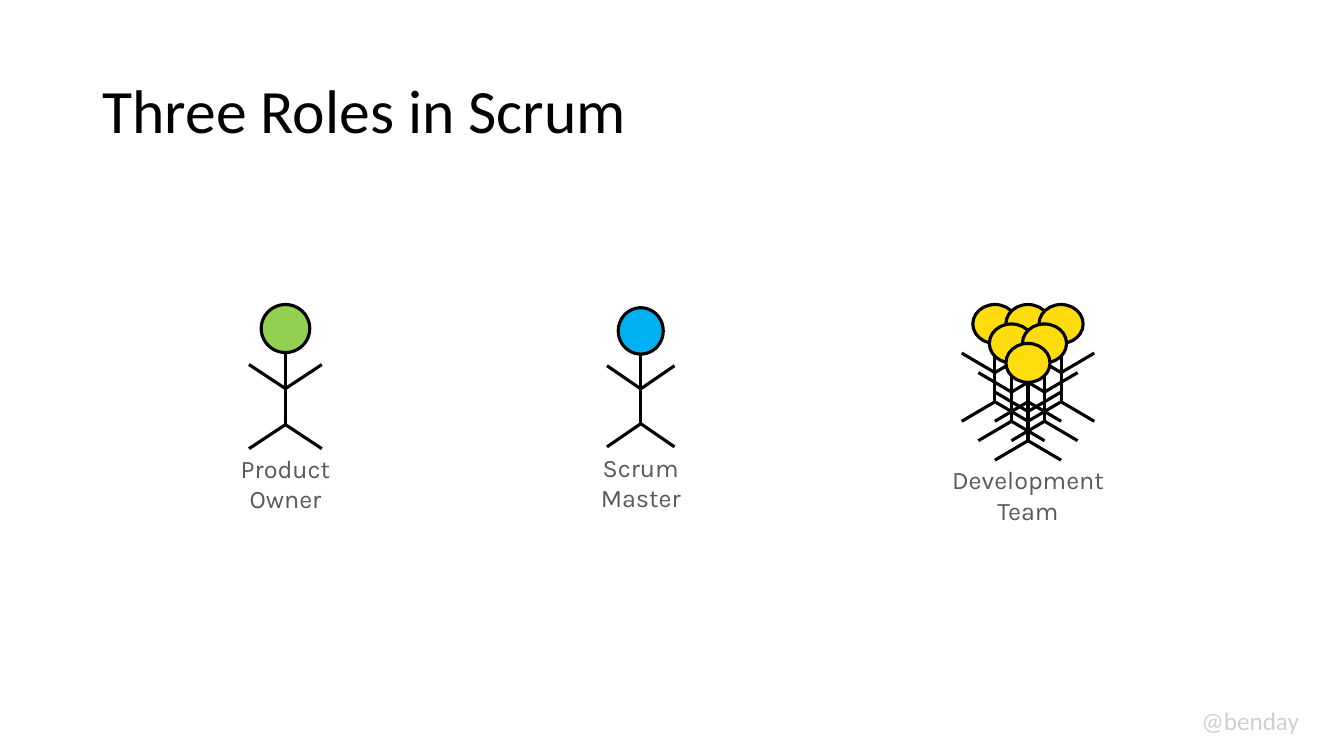
from lxml import etree
from pptx import Presentation
from pptx.dml.color import RGBColor
from pptx.enum.shapes import MSO_CONNECTOR, MSO_SHAPE
from pptx.enum.text import MSO_ANCHOR, MSO_AUTO_SIZE, PP_ALIGN
from pptx.oxml.ns import qn
from pptx.util import Pt

OVAL = MSO_SHAPE.OVAL
STRAIGHT = MSO_CONNECTOR.STRAIGHT
LEFT, CENTER = PP_ALIGN.LEFT, PP_ALIGN.CENTER
MIDDLE = MSO_ANCHOR.MIDDLE
GROW, NO_FIT = MSO_AUTO_SIZE.SHAPE_TO_FIT_TEXT, MSO_AUTO_SIZE.NONE

COLORS = {
    "black": "000000",
    "handle": "D0CECE",
    "label": "58595B",
    "owner": "92D050",
    "master": "00B0F0",
    "team": "FFDC0C",
}


def color(name):
    return RGBColor.from_string(COLORS[name])


class RolePage:
    """Draws on one slide; all lengths are in points."""

    heading_font = "Calibri"
    label_font = "Karla"
    stroke = 2.25

    def __init__(self, deck):
        self.page = deck.slides.add_slide(deck.slide_layouts[5])

    def format_text(self, frame, font, size, color_name, align):
        for para in frame.paragraphs:
            para.alignment = align
            for span in para.runs:
                span.font.name = font
                span.font.size = Pt(size)
                span.font.color.rgb = color(color_name)

    def title(self, text, left, top, width, height):
        box = self.page.shapes.title
        box.left, box.top, box.width, box.height = Pt(left), Pt(top), Pt(width), Pt(height)
        frame = box.text_frame
        frame.text = text
        frame.auto_size = NO_FIT
        frame.vertical_anchor = MIDDLE
        frame.paragraphs[0].line_spacing = 0.9
        self.format_text(frame, self.heading_font, 44, "black", LEFT)

    def text(self, shapes, text, left, top, width, height, font, color_name, align):
        box = shapes.add_textbox(Pt(left), Pt(top), Pt(width), Pt(height))
        frame = box.text_frame
        frame.text = text
        frame.word_wrap = False
        frame.auto_size = GROW
        self.format_text(frame, font, 18, color_name, align)

    def handle(self, text, left, top, width, height):
        self.text(self.page.shapes, text, left, top, width, height,
                  self.heading_font, "handle", LEFT)

    def line(self, shapes, x1, y1, x2, y2):
        limb = shapes.add_connector(STRAIGHT, Pt(x1), Pt(y1), Pt(x2), Pt(y2))
        limb.line.color.rgb = color("black")
        limb.line.width = Pt(self.stroke)
        etree.SubElement(limb._element.spPr, qn("a:effectLst"))

    def person(self, shapes, center, top, width, height, fill):
        """Stick figure whose joints sit on twelfths of its height."""
        head_bottom, hand, shoulder, hip, foot = (
            top + height * part / 12 for part in (4, 5, 7, 10, 12))
        head_width = width * 2 / 3
        head = shapes.add_shape(OVAL, Pt(center - head_width / 2), Pt(top),
                                Pt(head_width), Pt(head_bottom - top))
        head.shadow.inherit = False
        head.fill.solid()
        head.fill.fore_color.rgb = color(fill)
        head.line.color.rgb = color("black")
        head.line.width = Pt(self.stroke)
        self.line(shapes, center, head_bottom, center, hip)
        for joint, tip in ((hip, foot), (shoulder, hand)):
            for side in (-1, 1):
                self.line(shapes, center, joint, center + side * width / 2, tip)

    def role(self, label, center, top, figure, fill, label_box, rows=1):
        """Grouped figures in rows, each row one shorter than the last, over a label."""
        shapes = self.page.shapes.add_group_shape().shapes
        width, height = figure
        for row in range(rows):
            count = rows - row
            for place in range(count):
                shift = (place - (count - 1) / 2) * width / 2
                self.person(shapes, center + shift, top + row * height / 6,
                            width, height, fill)
        label_top, label_width, label_height = label_box
        self.text(shapes, label, center - label_width / 2, label_top, label_width,
                  label_height, self.label_font, "label", CENTER)


def main():
    deck = Presentation()
    deck.slide_width, deck.slide_height = Pt(960), Pt(540)
    roles = RolePage(deck)
    roles.handle("@benday", 851, 500.4, 85, 28.8)
    roles.title("Three Roles in Scrum", 66, 28.8, 828, 104.4)
    roles.role("Product\nOwner", 203.9, 217.5, (52, 103), "owner", (320.4, 170, 115))
    roles.role("Development\nTeam", 734.3, 217.5, (47.3, 83.4), "team",
               (328.4, 245, 106.6), rows=3)
    roles.role("Scrum\nMaster", 457.7, 219.8, (48.2, 99.4), "master", (319.2, 141, 127.4))
    deck.save("out.pptx")


if __name__ == "__main__":
    main()
